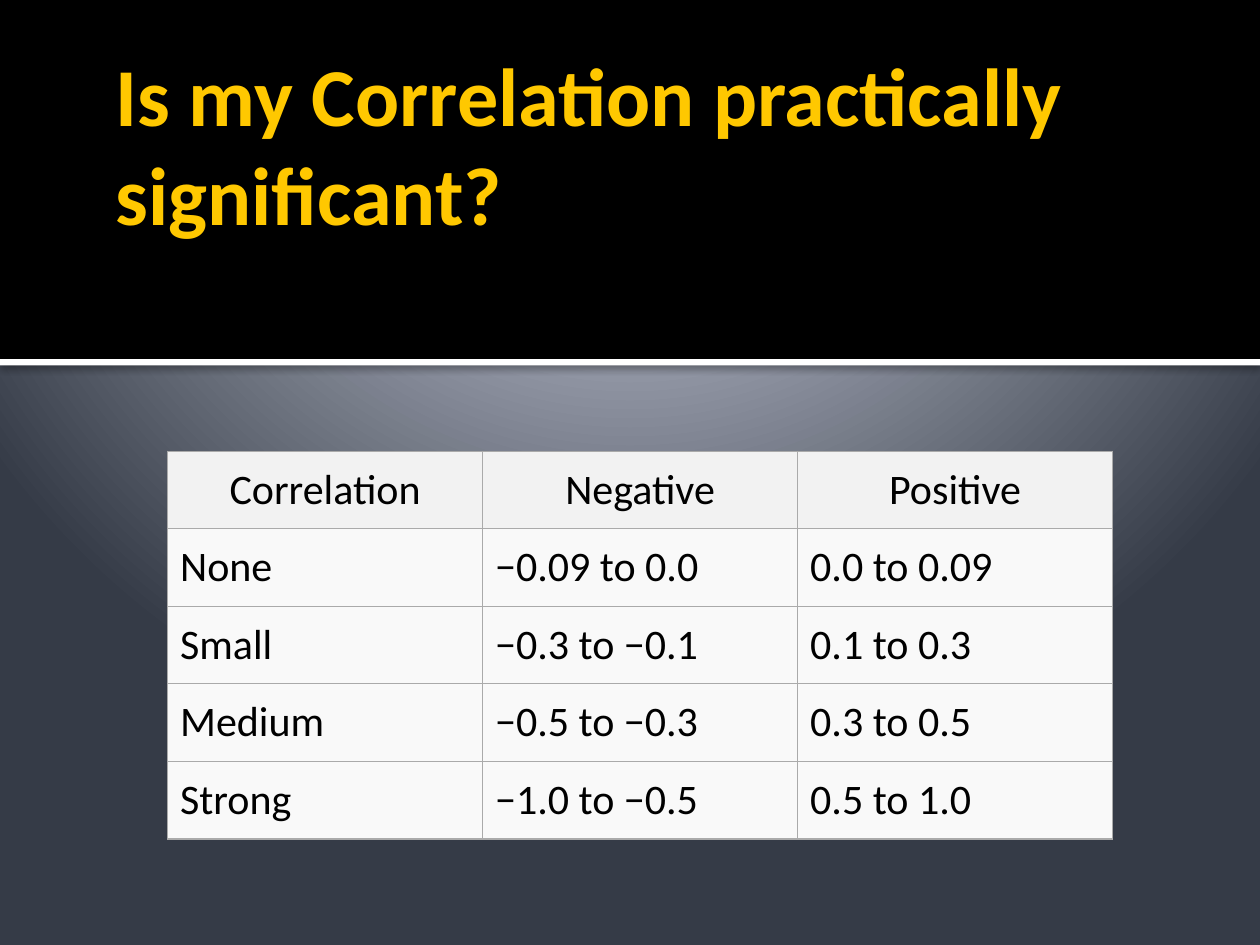
import pptx
import pptx.dml.color
import pptx.enum.shapes
import pptx.enum.text
import pptx.oxml
import pptx.oxml.ns
import pptx.util

WIDTH, HEIGHT = 10, 7.5
FONT = "Calibri"
NAMESPACE = pptx.oxml.ns.nsdecls("a")
BAND_SHARE = 0.38  # height of the black title band
RULE_HEIGHT = 0.05
BACKGROUND_STOPS = [(0, "C1C5D3"), (12, "C1C5D3"), (20, "BFC4D2"), (100, "353B47")]
ROWS = [
    ("Correlation", "Negative", "Positive"),
    ("None", "−0.09 to 0.0", "0.0 to 0.09"),
    ("Small", "−0.3 to −0.1", "0.1 to 0.3"),
    ("Medium", "−0.5 to −0.3", "0.3 to 0.5"),
    ("Strong", "−1.0 to −0.5", "0.5 to 1.0"),
]


def color(hex_code):
    return pptx.dml.color.RGBColor.from_string(hex_code)


def inches(*lengths):
    return [pptx.util.Inches(length) for length in lengths]


def style_paragraph(paragraph, size, hex_code, bold=False):
    font = paragraph.font
    font.name, font.size, font.bold = FONT, pptx.util.Pt(size), bold
    font.color.rgb = color(hex_code)


def set_background(slide):
    """Radial gradient centred above the slide."""
    slide.background.fill.gradient()
    gradient = slide.element.xpath(".//p:bgPr/a:gradFill")[0]
    stops = "".join(
        f'<a:gs pos="{position * 1000}"><a:srgbClr val="{hex_code}"/></a:gs>'
        for position, hex_code in BACKGROUND_STOPS
    )
    radial = pptx.oxml.parse_xml(
        f'<a:gradFill {NAMESPACE} rotWithShape="1"><a:gsLst>{stops}</a:gsLst>'
        '<a:path path="circle"><a:fillToRect l="10000" t="-25000" r="10000" b="125000"/>'
        "</a:path></a:gradFill>"
    )
    gradient.getparent().replace(gradient, radial)


def add_band(slide, top, height, hex_code):
    """Full-width bar without outline or shadow."""
    band = slide.shapes.add_shape(
        pptx.enum.shapes.MSO_SHAPE.RECTANGLE, *inches(0, top, WIDTH, height)
    )
    band.shadow.inherit = False
    band.fill.solid()
    band.fill.fore_color.rgb = color(hex_code)
    band.line.fill.background()
    return band


def add_shadow(shape):
    effects = shape.element.spPr.find(pptx.oxml.ns.qn("a:effectLst"))
    effects.append(pptx.oxml.parse_xml(
        f'<a:outerShdw {NAMESPACE} blurRad="63500" dist="10000" dir="5400000" '
        'algn="tl" rotWithShape="0"><a:srgbClr val="000000">'
        '<a:alpha val="60000"/></a:srgbClr></a:outerShdw>'
    ))


def add_title(slide, text):
    title = slide.shapes.add_textbox(*inches(0.82, 0.13, 8.76, 1.79))
    frame = title.text_frame
    frame.word_wrap = True
    frame.margin_top = frame.margin_bottom = 0
    frame.vertical_anchor = pptx.enum.text.MSO_ANCHOR.BOTTOM
    frame.text = text
    style_paragraph(frame.paragraphs[0], 47, "FFC800", bold=True)


def set_borders(cell, hex_code, points):
    properties = cell._tc.get_or_add_tcPr()
    for index, side in enumerate(("lnL", "lnR", "lnT", "lnB")):
        properties.insert(index, pptx.oxml.parse_xml(
            f'<a:{side} {NAMESPACE} w="{pptx.util.Pt(points)}"><a:solidFill>'
            f'<a:srgbClr val="{hex_code}"/></a:solidFill></a:{side}>'
        ))


def fill_cell(cell, text, is_header):
    cell.text = text
    cell.vertical_anchor = pptx.enum.text.MSO_ANCHOR.MIDDLE
    cell.fill.solid()
    cell.fill.fore_color.rgb = color("F2F2F2" if is_header else "F9F9F9")
    paragraph = cell.text_frame.paragraphs[0]
    style_paragraph(paragraph, 24, "000000")
    if is_header:
        paragraph.alignment = pptx.enum.text.PP_ALIGN.CENTER
    set_borders(cell, "AAAAAA", 0.75)


def add_strength_table(slide):
    # Equal columns and rows share the table's size
    frame = slide.shapes.add_table(
        len(ROWS), len(ROWS[0]), *inches(1.33, 3.58, 7.5, 3.08)
    )
    for row_index, row in enumerate(ROWS):
        for column_index, text in enumerate(row):
            cell = frame.table.cell(row_index, column_index)
            fill_cell(cell, text, is_header=row_index == 0)


def main():
    presentation = pptx.Presentation()
    presentation.slide_width, presentation.slide_height = inches(WIDTH, HEIGHT)
    slide = presentation.slides.add_slide(presentation.slide_layouts[6])

    # Backdrop: gradient, title band and white rule
    set_background(slide)
    band_height = BAND_SHARE * HEIGHT
    add_band(slide, 0, band_height, "000000")
    add_shadow(add_band(slide, band_height, RULE_HEIGHT, "FFFFFF"))

    # Content
    add_title(slide, "Is my Correlation practically significant?")
    add_strength_table(slide)

    presentation.save("out.pptx")


if __name__ == "__main__":
    main()
